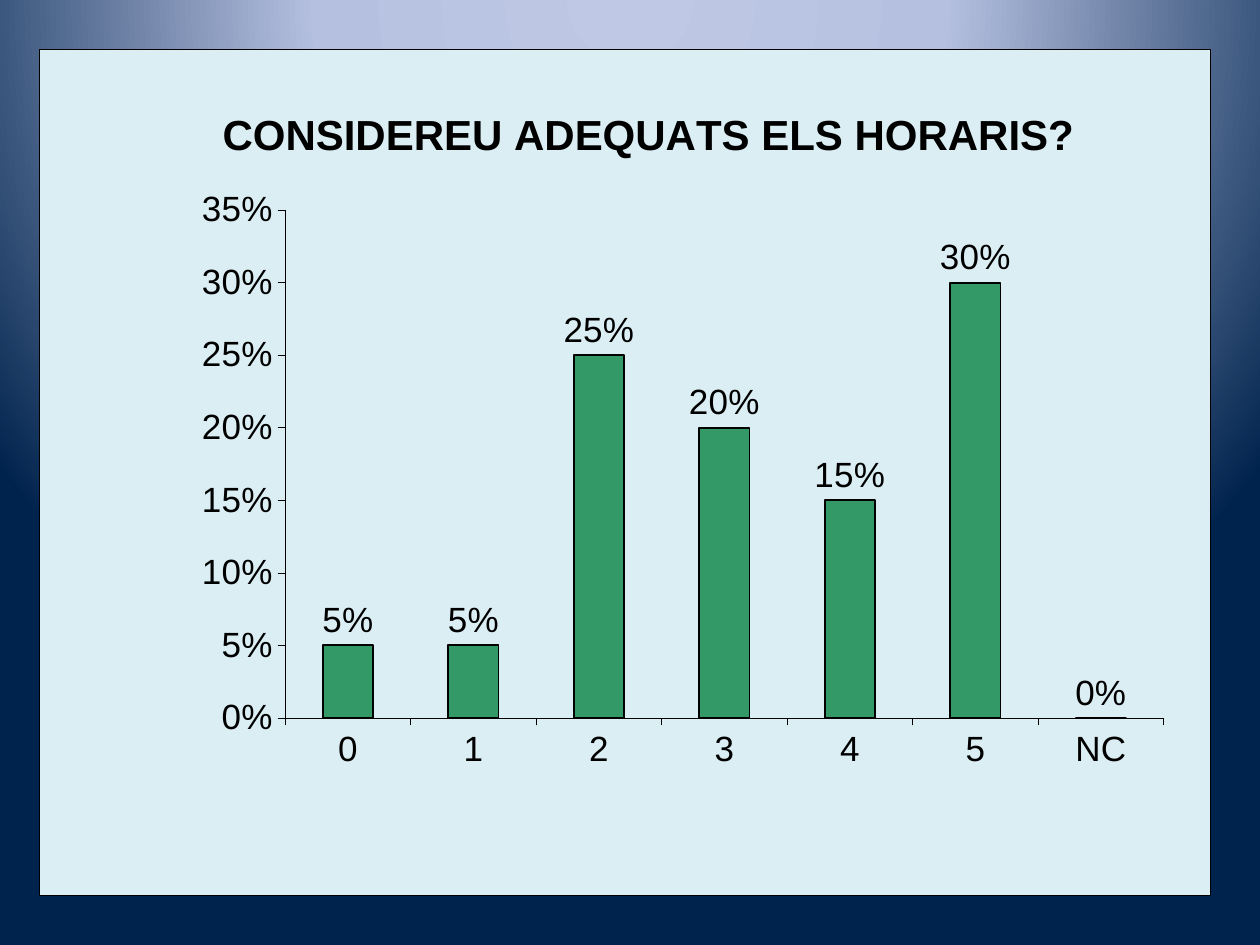
from lxml import etree
from pptx import Presentation
from pptx import util as u
from pptx.chart.data import CategoryChartData
from pptx.dml.color import RGBColor
from pptx.enum import chart as c
from pptx.oxml import parse_xml
from pptx.oxml.ns import nsdecls, qn

COLORS = {
    "ink": "000000", "panel": "DBEEF4", "bar": "339966",
    "glow": "BFC9E5", "haze": "B5C0E0", "night": "00234D",
}
CATEGORIES = ["0", "1", "2", "3", "4", "5", "NC"]
SHARES = [0.05, 0.05, 0.25, 0.2, 0.15, 0.3, 0]


def apply_format(target, values):
    """Set every attribute named in a dict of format values."""
    for name, value in values.items():
        setattr(target, name, value)


def format_font(font, size, bold=False):
    """Give a font the chart's typeface and ink colour."""
    apply_format(font, {"name": "Arial", "size": u.Pt(size), "bold": bold})
    font.color.rgb = RGBColor.from_string(COLORS["ink"])


def format_line(line, width):
    """Draw a line in ink at a width in points."""
    line.color.rgb = RGBColor.from_string(COLORS["ink"])
    line.width = u.Pt(width)


def paint_background(slide):
    """Fill the background with a circular gradient centred above the slide."""
    slide.background.fill.gradient()
    gradient = slide.element.find(".//" + qn("a:gradFill"))
    for child in list(gradient):
        gradient.remove(child)
    stops = etree.SubElement(gradient, qn("a:gsLst"))
    for position, name in ((0, "glow"), (40, "haze"), (100, "night")):
        stop = etree.SubElement(stops, qn("a:gs"), pos=str(position * 1000))
        etree.SubElement(stop, qn("a:srgbClr"), val=COLORS[name])
    circle = etree.SubElement(gradient, qn("a:path"), path="circle")
    etree.SubElement(circle, qn("a:fillToRect"),
                     l="50000", t="-80000", r="50000", b="180000")


def set_layout(parent, index, values):
    """Place a chart part by fractions of the chart area."""
    for old in parent.findall(qn("c:layout")):
        parent.remove(old)
    layout = etree.Element(qn("c:layout"))
    manual = etree.SubElement(layout, qn("c:manualLayout"))
    for name, value in values.items():
        etree.SubElement(manual, qn("c:" + name), val=str(value))
    parent.insert(index, layout)


def fill_chart_area(chart):
    """Give the chart area its pale fill and thin border."""
    area = parse_xml(
        f'<c:spPr {nsdecls("c", "a")}>'
        f'<a:solidFill><a:srgbClr val="{COLORS["panel"]}"/></a:solidFill>'
        f'<a:ln w="{u.Pt(0.25)}"><a:solidFill><a:srgbClr val="{COLORS["ink"]}"/>'
        '</a:solidFill></a:ln></c:spPr>')
    chart.element.find(qn("c:chart")).addnext(area)


def add_title(chart, wording):
    """Write the bold chart title."""
    frame = chart.chart_title.text_frame
    frame.text = wording
    format_font(frame.paragraphs[0].runs[0].font, 24, bold=True)
    set_layout(chart.element.find(".//" + qn("c:title")), 1,
               {"xMode": "edge", "yMode": "edge", "x": 0.15, "y": 0.06})


def format_axes(chart):
    """Style both axes and set the percentage scale."""
    for axis in (chart.category_axis, chart.value_axis):
        apply_format(axis, {
            "has_major_gridlines": False,
            "major_tick_mark": c.XL_TICK_MARK.OUTSIDE,
            "minor_tick_mark": c.XL_TICK_MARK.NONE,
        })
        format_line(axis.format.line, 0.25)
        format_font(axis.tick_labels.font, 20)
    apply_format(chart.value_axis, {
        "minimum_scale": 0, "maximum_scale": 0.35, "major_unit": 0.05})
    apply_format(chart.value_axis.tick_labels, {
        "number_format": "0%", "number_format_is_linked": False})


def format_bars(plot):
    """Style the columns and their value labels."""
    apply_format(plot, {"gap_width": 150, "vary_by_categories": False,
                        "has_data_labels": True})
    apply_format(plot.data_labels, {
        "show_value": True, "number_format": "0%",
        "number_format_is_linked": False,
        "position": c.XL_LABEL_POSITION.OUTSIDE_END,
    })
    format_font(plot.data_labels.font, 20)
    series = plot.series[0]
    series.format.fill.solid()
    series.format.fill.fore_color.rgb = RGBColor.from_string(COLORS["bar"])
    format_line(series.format.line, 1)


def add_schedule_chart(slide):
    """Add the column chart of answers about the timetable."""
    data = CategoryChartData(number_format="0%")
    data.categories = CATEGORIES
    data.add_series("Series 1", SHARES)
    chart = slide.shapes.add_chart(
        c.XL_CHART_TYPE.COLUMN_CLUSTERED, u.Inches(0.31), u.Inches(0.39),
        u.Inches(9.3), u.Inches(6.72), data).chart
    chart.has_legend = False
    format_font(chart.font, 20)
    fill_chart_area(chart)
    add_title(chart, "CONSIDEREU ADEQUATS ELS HORARIS?")
    format_axes(chart)
    format_bars(chart.plots[0])
    set_layout(chart.element.find(".//" + qn("c:plotArea")), 0, {
        "layoutTarget": "inner", "xMode": "edge", "yMode": "edge",
        "x": 0.21, "y": 0.19, "w": 0.75, "h": 0.6})


def main():
    """Build and save the slide."""
    presentation = Presentation()
    apply_format(presentation, {"slide_width": u.Inches(10),
                                "slide_height": u.Inches(7.5)})
    slide = presentation.slides.add_slide(presentation.slide_layouts[6])
    paint_background(slide)
    add_schedule_chart(slide)
    presentation.save("out.pptx")


if __name__ == "__main__":
    main()
